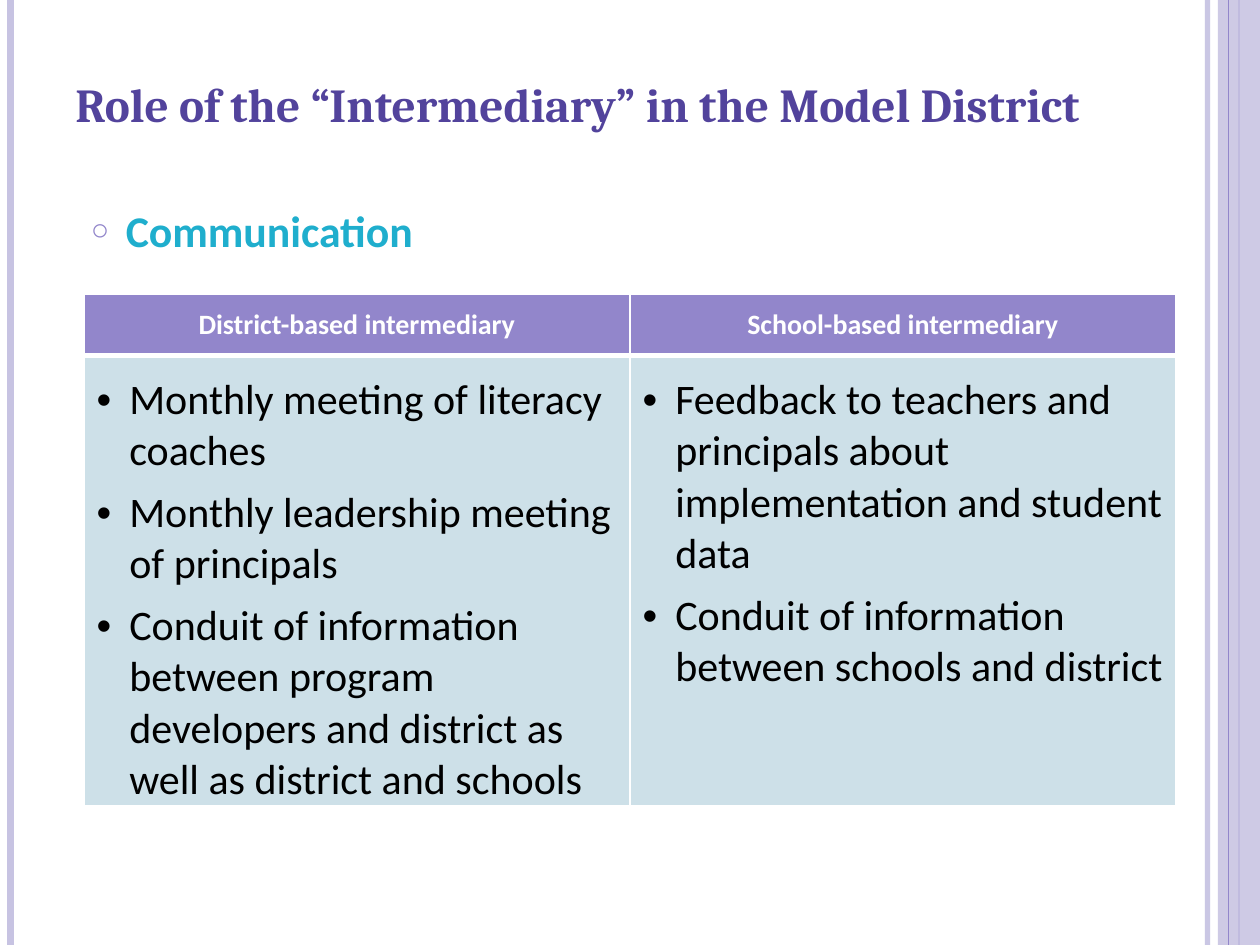
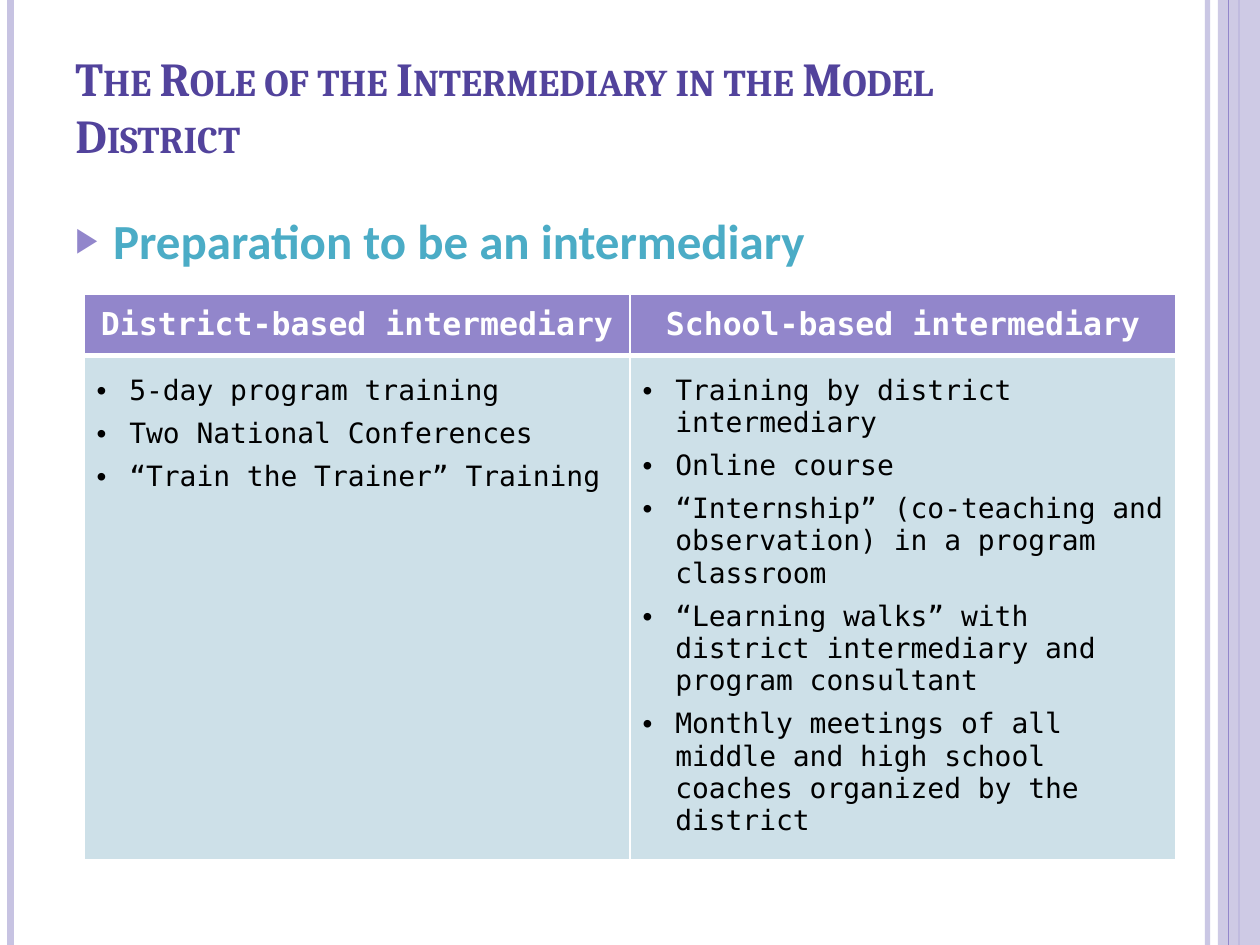
from lxml import etree
from pptx import Presentation
from pptx.dml.color import RGBColor
from pptx.enum.shapes import MSO_CONNECTOR, MSO_SHAPE
from pptx.enum.text import MSO_ANCHOR, PP_ALIGN
from pptx.oxml.ns import qn
from pptx.util import Pt

LINE = MSO_CONNECTOR.STRAIGHT
RECTANGLE = MSO_SHAPE.RECTANGLE
TOP, MIDDLE, BOTTOM = MSO_ANCHOR.TOP, MSO_ANCHOR.MIDDLE, MSO_ANCHOR.BOTTOM
LEFT, CENTER = PP_ALIGN.LEFT, PP_ALIGN.CENTER

WHITE = RGBColor(0xFF, 0xFF, 0xFF)
BLACK = RGBColor(0, 0, 0)
LAVENDER = RGBColor(0xC7, 0xC3, 0xE2)
PURPLE = RGBColor(0x92, 0x86, 0xCB)
DEEP_PURPLE = RGBColor(0x52, 0x43, 0x9C)
BRIGHT_TEAL = RGBColor(0x1F, 0xAE, 0xCD)
TEAL = RGBColor(0x4B, 0xAC, 0xC6)
PALE_BLUE = RGBColor(0xCD, 0xE0, 0xE8)

SERIF, SANS, MONO = "Cambria", "Calibri", "DejaVu Sans Mono"
SLIDE_WIDTH, SLIDE_HEIGHT = 720, 540
MARGIN, TITLE_WIDTH = 36, 588
TABLE_LEFT, TABLE_TOP, COLUMN_WIDTH = 48, 168, 312
ROW_HEIGHTS = (35.3, 253.4)
HEADINGS = ("District-based intermediary", "School-based intermediary")


def add_child(parent, tag, **attributes):
    child = etree.SubElement(parent, qn(tag))
    for name, value in attributes.items():
        child.set(name, str(value))
    return child


def set_opacity(shape, percent):
    color = shape._element.spPr.find(".//" + qn("a:srgbClr"))
    add_child(color, "a:alpha", val=percent * 1000)


def add_rule(slide, x, color, width):
    """Draw a vertical line over the full slide height."""
    rule = slide.shapes.add_connector(LINE, Pt(x), 0, Pt(x), Pt(SLIDE_HEIGHT))
    rule.line.color.rgb = color
    rule.line.width = Pt(width)
    add_child(rule._element.spPr, "a:effectLst")
    return rule


def add_frame(slide):
    """Draw the side rules and the right-hand band shared by all slides."""
    set_opacity(add_rule(slide, 690, LAVENDER, 3), 93)
    add_rule(slide, 6, LAVENDER, 4.5)
    add_rule(slide, 708, PURPLE, 1.5)
    band = slide.shapes.add_shape(RECTANGLE, Pt(696), 0, Pt(24), Pt(SLIDE_HEIGHT))
    band.shadow.inherit = False
    band.fill.solid()
    band.fill.fore_color.rgb = LAVENDER
    band.line.fill.background()
    set_opacity(band, 87)
    add_rule(slide, 702, PURPLE, 0.75)


def add_run(paragraph, text, font, size, color, bold=True):
    run = paragraph.add_run()
    run.text = text
    run.font.name = font
    run.font.size = Pt(size)
    run.font.color.rgb = color
    run.font.bold = bold
    return run


def set_bullet(paragraph, char, indent, hang, color=None, percent=100):
    properties = paragraph._p.get_or_add_pPr()
    properties.set("marL", str(Pt(indent)))
    properties.set("indent", str(-Pt(hang)))
    if color is not None:
        add_child(add_child(properties, "a:buClr"), "a:srgbClr", val=color)
    add_child(properties, "a:buSzPct", val=percent * 1000)
    add_child(properties, "a:buFont", typeface="Arial")
    add_child(properties, "a:buChar", char=char)


def add_text_frame(slide, top, width, height, anchor=TOP):
    box = slide.shapes.add_textbox(Pt(MARGIN), Pt(top), Pt(width), Pt(height))
    box.text_frame.word_wrap = True
    box.text_frame.vertical_anchor = anchor
    return box.text_frame


def add_title(slide, text, anchor, small_caps=False):
    frame = add_text_frame(slide, 21.6, TITLE_WIDTH, 75, anchor)
    run = add_run(frame.paragraphs[0], text, SERIF, 27, DEEP_PURPLE)
    if small_caps:
        run._r.get_or_add_rPr().set("cap", "small")


def add_topic(slide, text, top, width, height, size, color, char, indent, hang):
    paragraph = add_text_frame(slide, top, width, height).paragraphs[0]
    paragraph.space_before = Pt(12)
    set_bullet(paragraph, char, indent, hang, PURPLE, 70)
    add_run(paragraph, text, SANS, size, color)


def format_cell(cell, fill, anchor, margins, top_border, bottom_border):
    """Set fill, anchor, margins (left/right, top, bottom) and white borders."""
    side, top, bottom = margins
    cell.margin_left = cell.margin_right = Pt(side)
    cell.margin_top, cell.margin_bottom = Pt(top), Pt(bottom)
    cell.vertical_anchor = anchor
    properties = cell._tc.get_or_add_tcPr()
    borders = {"a:lnL": 1, "a:lnR": 1, "a:lnT": top_border, "a:lnB": bottom_border}
    for tag, width in borders.items():
        border = add_child(properties, tag, w=Pt(width))
        add_child(add_child(border, "a:solidFill"), "a:srgbClr", val=WHITE)
    cell.fill.solid()
    cell.fill.fore_color.rgb = fill


def add_comparison(slide, duties, font, heading_size, duty_size):
    """Add the two-column table; duties holds one list per column."""
    table = slide.shapes.add_table(
        2, 2, Pt(TABLE_LEFT), Pt(TABLE_TOP),
        Pt(2 * COLUMN_WIDTH), Pt(sum(ROW_HEIGHTS))).table
    table.horz_banding = False
    for row, height in zip(table.rows, ROW_HEIGHTS):
        row.height = Pt(height)
    for column, (heading, items) in enumerate(zip(HEADINGS, duties)):
        table.columns[column].width = Pt(COLUMN_WIDTH)
        head, body = table.cell(0, column), table.cell(1, column)
        format_cell(head, PURPLE, MIDDLE, (3.6, 3.6, 3.6), 1, 3)
        format_cell(body, PALE_BLUE, TOP, (7.2, 10.8, 3.6), 3, 1)
        paragraph = head.text_frame.paragraphs[0]
        paragraph.alignment = CENTER
        add_run(paragraph, heading, font, heading_size, WHITE)
        for number, item in enumerate(items):
            frame = body.text_frame
            paragraph = frame.add_paragraph() if number else frame.paragraphs[0]
            paragraph.alignment = LEFT
            paragraph.space_after = Pt(6)
            set_bullet(paragraph, "•", 18.7, 18.7)
            add_run(paragraph, item, font, duty_size, BLACK, bold=False)


def add_slide(deck):
    slide = deck.slides.add_slide(deck.slide_layouts[6])
    add_frame(slide)
    return slide


def add_communication_slide(deck):
    slide = add_slide(deck)
    add_topic(slide, "Communication", 113, TITLE_WIDTH, 49, 25, BRIGHT_TEAL,
              "○", 28.8, 20)
    add_comparison(slide, (
        ["Monthly meeting of literacy coaches",
         "Monthly leadership meeting of principals",
         "Conduit of information between program developers and district "
         "as well as district and schools"],
        ["Feedback to teachers and principals about implementation and "
         "student data",
         "Conduit of information between schools and district"],
    ), SANS, 16, 24)
    add_title(slide, "Role of the “Intermediary” in the Model District", MIDDLE)


def add_preparation_slide(deck):
    slide = add_slide(deck)
    add_topic(slide, "Preparation to be an intermediary", 116.6, 648, 45.4, 28,
              TEAL, "▶", 21.6, 21.6)
    add_title(slide, "The Role of the Intermediary in the Model District", BOTTOM,
              small_caps=True)
    add_comparison(slide, (
        ["5-day program training",
         "Two National Conferences",
         "“Train the Trainer” Training"],
        ["Training by district intermediary",
         "Online course",
         "“Internship” (co-teaching and observation) in a program classroom",
         "“Learning walks” with district intermediary and program consultant",
         "Monthly meetings of all middle and high school coaches organized "
         "by the district"],
    ), MONO, 18, 16)


def main():
    deck = Presentation()
    deck.slide_width, deck.slide_height = Pt(SLIDE_WIDTH), Pt(SLIDE_HEIGHT)
    add_communication_slide(deck)
    add_preparation_slide(deck)
    deck.save("out.pptx")


if __name__ == "__main__":
    main()
